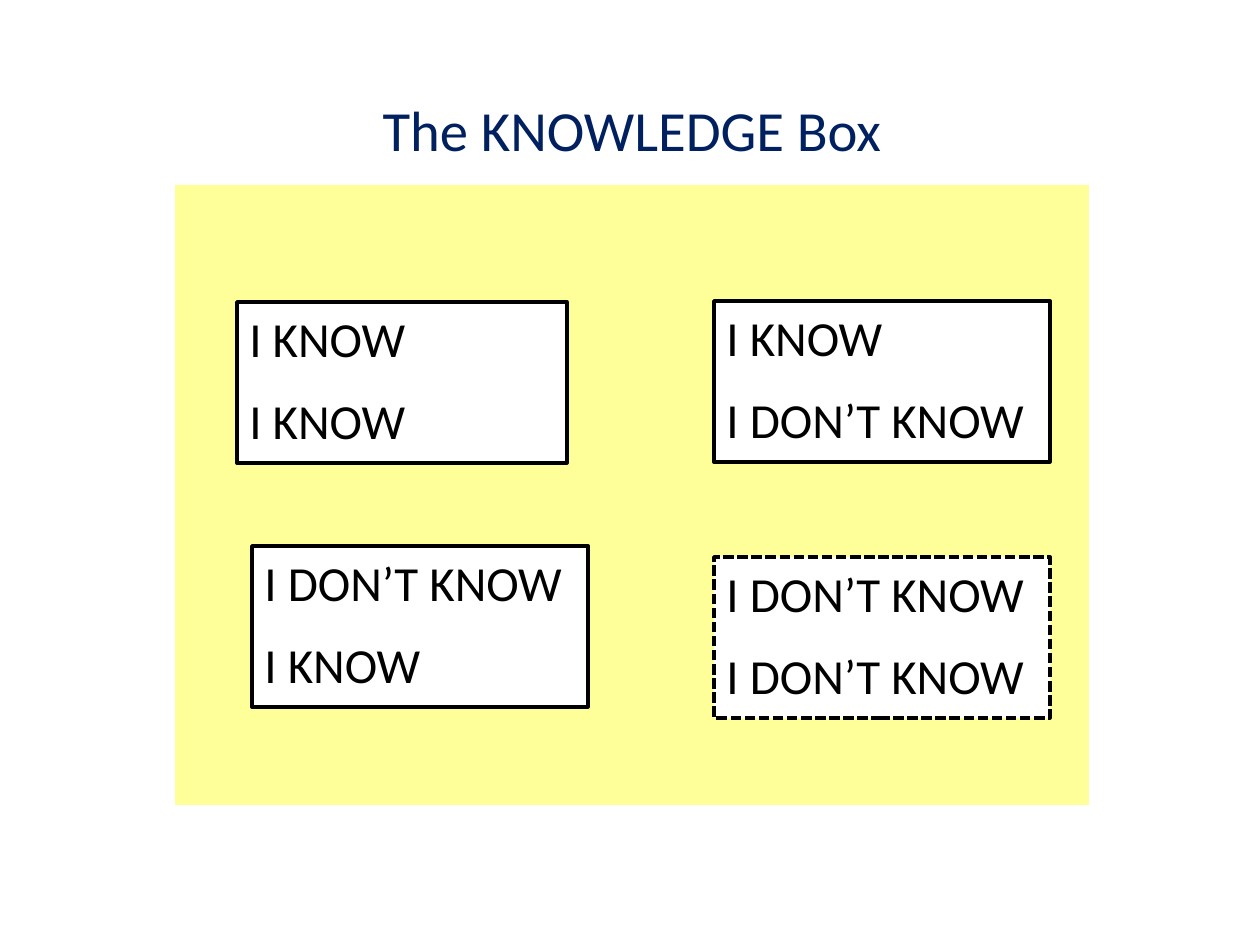
import dataclasses

import pptx
import pptx.dml.color
import pptx.enum.dml
import pptx.enum.shapes
import pptx.enum.text
import pptx.util

PIXELS_PER_INCH = 126
KNOW = "I KNOW"
DONT_KNOW = "I DON’T KNOW"


def px(length):
    return pptx.util.Inches(length / PIXELS_PER_INCH)


def color(value):
    return pptx.dml.color.RGBColor.from_string(value)


@dataclasses.dataclass(frozen=True)
class Theme:
    font: str = "Calibri"
    title_color: str = "002060"
    panel_color: str = "FFFF99"
    box_color: str = "FFFFFF"
    ink: str = "000000"
    title_size: float = 32.4
    box_size: float = 28
    paragraph_gap: float = 13.3
    line_width: float = 2


class SlideBuilder:
    def __init__(self, presentation, theme):
        self.theme = theme
        self.slide = presentation.slides.add_slide(presentation.slide_layouts[5])

    def format_text(self, paragraph, size, text_color, alignment):
        paragraph.alignment = alignment
        for run in paragraph.runs:
            run.font.name = self.theme.font
            run.font.size = pptx.util.Pt(size)
            run.font.color.rgb = color(text_color)

    def title(self, text, left, top, width, height):
        shape = self.slide.shapes.title
        shape.left, shape.top = px(left), px(top)
        shape.width, shape.height = px(width), px(height)
        text_frame = shape.text_frame
        text_frame.text = text
        text_frame.vertical_anchor = pptx.enum.text.MSO_ANCHOR.MIDDLE
        self.format_text(text_frame.paragraphs[0], self.theme.title_size,
                         self.theme.title_color, pptx.enum.text.PP_ALIGN.CENTER)

    def rectangle(self, fill_color, left, top, width, height):
        shape = self.slide.shapes.add_shape(
            pptx.enum.shapes.MSO_SHAPE.RECTANGLE,
            px(left), px(top), px(width), px(height))
        shape.shadow.inherit = False
        shape.fill.solid()
        shape.fill.fore_color.rgb = color(fill_color)
        shape.line.fill.background()
        return shape

    def panel(self, left, top, width, height):
        self.rectangle(self.theme.panel_color, left, top, width, height)

    def box(self, lines, left, top, width, height, dashed=False):
        shape = self.rectangle(self.theme.box_color, left, top, width, height)
        shape.line.color.rgb = color(self.theme.ink)
        shape.line.width = pptx.util.Pt(self.theme.line_width)
        if dashed:
            shape.line.dash_style = pptx.enum.dml.MSO_LINE.SQUARE_DOT
        text_frame = shape.text_frame
        text_frame.word_wrap = True
        text_frame.vertical_anchor = pptx.enum.text.MSO_ANCHOR.TOP
        text_frame.text = "\n".join(lines)
        for paragraph in text_frame.paragraphs:
            paragraph.space_before = pptx.util.Pt(self.theme.paragraph_gap)
            self.format_text(paragraph, self.theme.box_size, self.theme.ink,
                             pptx.enum.text.PP_ALIGN.LEFT)


def main():
    presentation = pptx.Presentation()
    presentation.slide_width = pptx.util.Inches(10)
    presentation.slide_height = pptx.util.Inches(7.5)

    builder = SlideBuilder(presentation, Theme())
    builder.title("The KNOWLEDGE Box", 123, 95, 1018, 67)
    builder.panel(175, 185, 914, 620)

    box_height = 161
    builder.box((KNOW, KNOW), 237, 302, 330, box_height)
    builder.box((KNOW, DONT_KNOW), 714, 301, 336, box_height)
    builder.box((DONT_KNOW, KNOW), 252, 546, 336, box_height)
    builder.box((DONT_KNOW, DONT_KNOW), 714, 557, 336, box_height, dashed=True)

    presentation.save("out.pptx")


if __name__ == "__main__":
    main()
